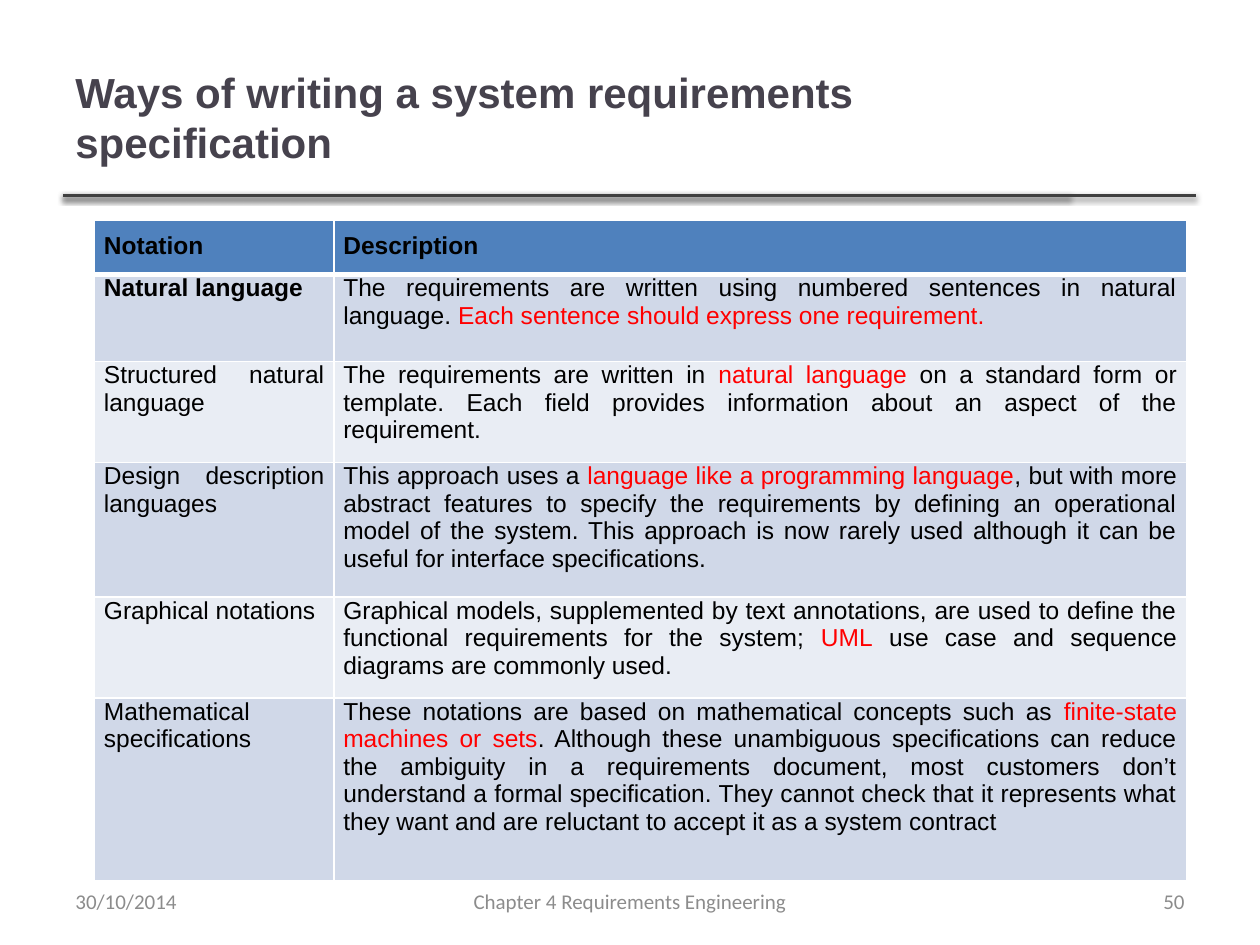
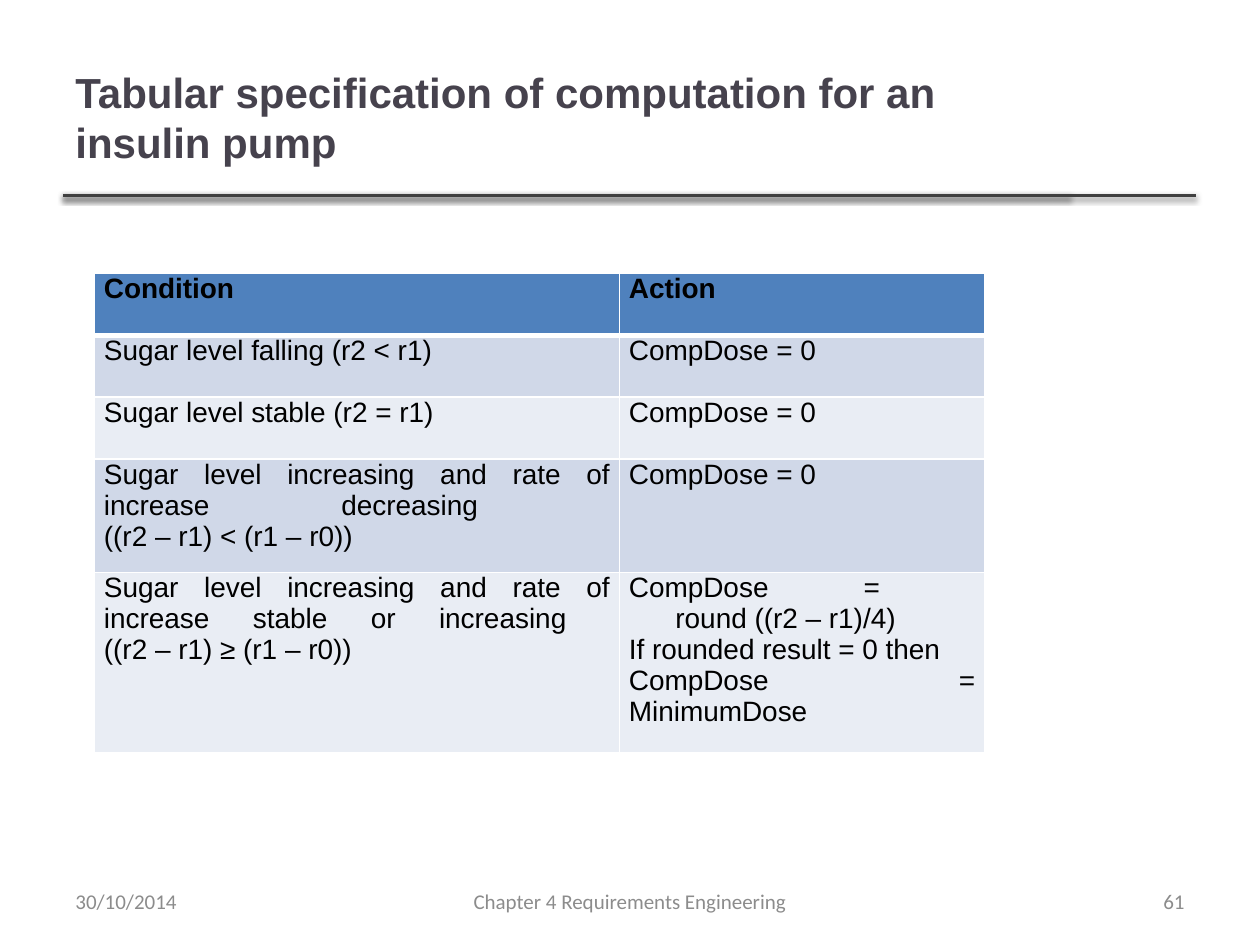
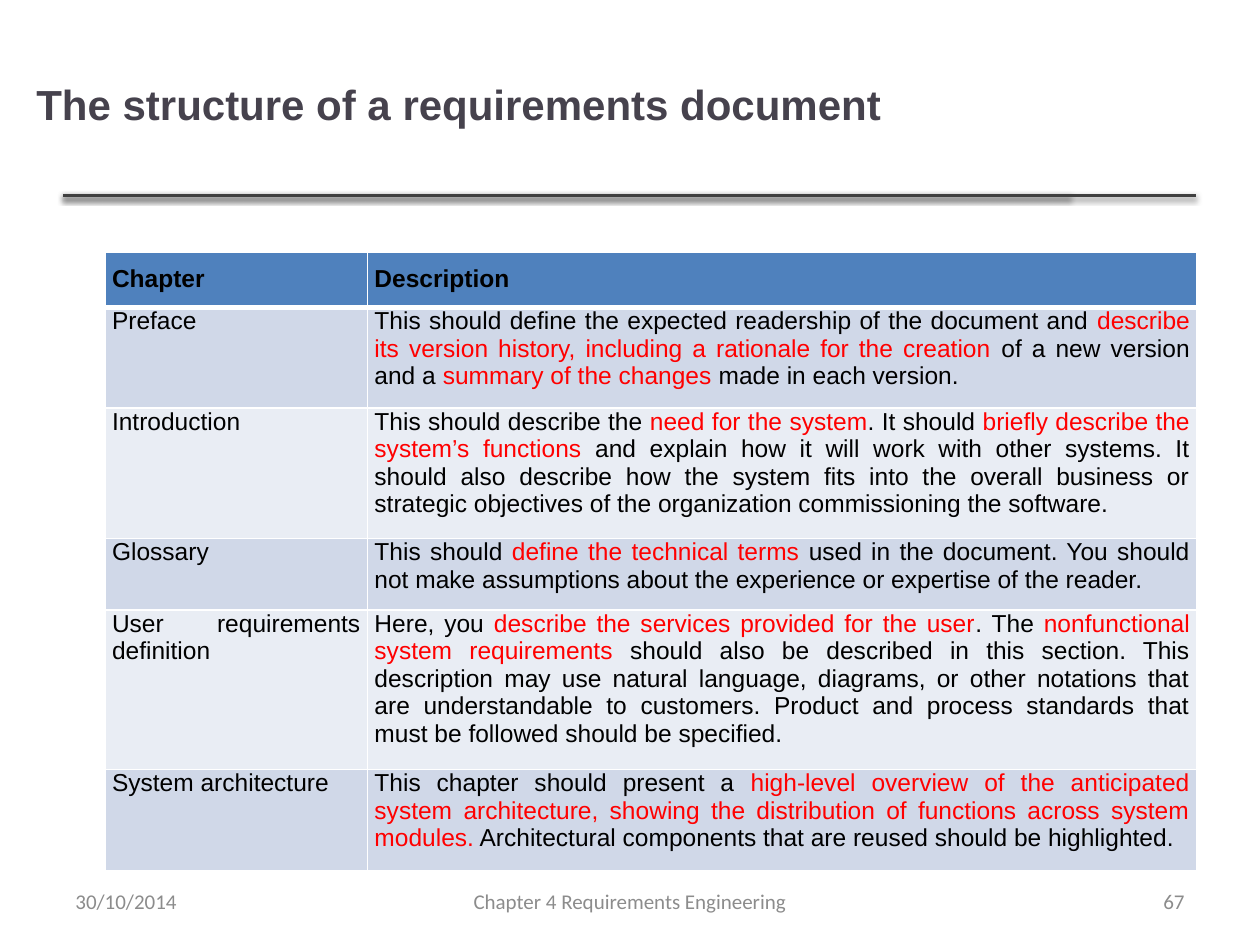
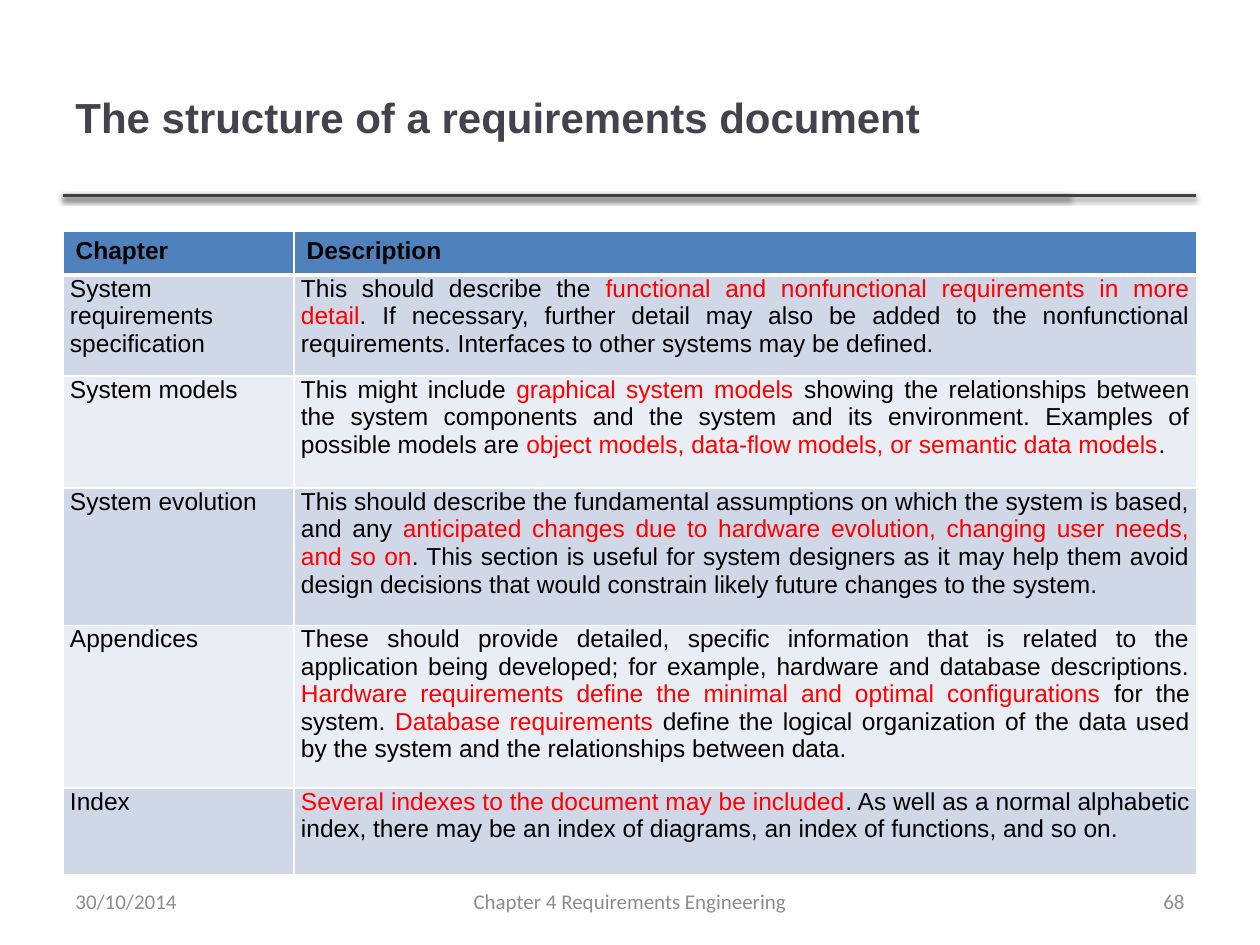
import copy

import lxml.etree
import pptx
import pptx.dml.color
import pptx.enum.shapes
import pptx.enum.text
import pptx.oxml
import pptx.oxml.ns
import pptx.util

Pt = pptx.util.Pt
RGB = pptx.dml.color.RGBColor
ALIGN = pptx.enum.text.PP_ALIGN
MIDDLE = pptx.enum.text.MSO_ANCHOR.MIDDLE
STRAIGHT = pptx.enum.shapes.MSO_CONNECTOR.STRAIGHT

# Colours
INK = RGB(0x00, 0x00, 0x00)
RED = RGB(0xFF, 0x00, 0x00)
TITLE = RGB(0x46, 0x42, 0x4D)
GREY = RGB(0x8C, 0x8C, 0x8C)
RULE = RGB(0x40, 0x40, 0x40)
HEAD = RGB(0x4F, 0x81, 0xBD)
BANDS = RGB(0xD0, 0xD8, 0xE8), RGB(0xE9, 0xED, 0xF4)
WHITE = RGB(0xFF, 0xFF, 0xFF)

NS = pptx.oxml.ns.nsdecls("a")
SHADOW = f"""<a:effectLst {NS}>
  <a:outerShdw blurRad="{Pt(3.1)}" dist="{Pt(1.6)}" dir="5400000" rotWithShape="0">
    <a:srgbClr val="000000"><a:alpha val="38000"/></a:srgbClr>
  </a:outerShdw>
</a:effectLst>"""


def write(par, text, size=14, font="Arial", color=INK, bold=False, align=ALIGN.LEFT):
    """Fill a paragraph; *stars* mark red words and newlines become breaks."""
    par.alignment = align
    for i, part in enumerate(text.split("*")):
        for j, line in enumerate(part.split("\n")):
            if j:
                par.add_line_break()
                par._p[-1].append(copy.deepcopy(run._r.rPr))
            if not line:
                continue
            run = par.add_run()
            run.text = line
            run.font.name, run.font.size = font, Pt(size)
            run.font.bold = bold
            run.font.color.rgb = RED if i % 2 else color


class Deck:
    def __init__(self):
        self.prs = pptx.Presentation()
        self.prs.slide_width, self.prs.slide_height = Pt(720), Pt(540)
        self.slide = None

    def page(self, title, number, spot=(36, 21.6, 574.6, 90)):
        """Start a slide with its title, double rule and footer."""
        self.slide = self.prs.slides.add_slide(self.prs.slide_layouts[6])
        for end in (611.3, 683.3):
            self.rule(36, end, 111.6)
        self.box(title, *spot, size=24, color=TITLE, bold=True)
        foot = (
            ("30/10/2014", 36, 168, ALIGN.LEFT),
            ("Chapter 4 Requirements Engineering", 246, 228, ALIGN.CENTER),
            (str(number), 516, 168, ALIGN.RIGHT),
        )
        for text, left, width, align in foot:
            self.box(text, left, 500.5, width, 28.75, size=12,
                     font="Calibri", color=GREY, align=align)

    def rule(self, start, end, top):
        line = self.slide.shapes.add_connector(
            STRAIGHT, Pt(start), Pt(top), Pt(end), Pt(top))
        line.line.color.rgb = RULE
        line.line.width = Pt(2)
        line._element.spPr.append(pptx.oxml.parse_xml(SHADOW))

    def box(self, text, left, top, width, height, **style):
        frame = self.slide.shapes.add_textbox(
            Pt(left), Pt(top), Pt(width), Pt(height)).text_frame
        frame.word_wrap = True
        frame.vertical_anchor = MIDDLE
        write(frame.paragraphs[0], text, **style)

    def edge(self, cell, row):
        """White cell borders, thick between the header and the body."""
        props = cell._tc.get_or_add_tcPr()
        thick = {0: "lnB", 1: "lnT"}.get(row)
        for side in ("lnL", "lnR", "lnT", "lnB"):
            width = Pt(3 if side == thick else 1)
            line = lxml.etree.SubElement(
                props, pptx.oxml.ns.qn("a:" + side), w=str(int(width)))
            line.append(pptx.oxml.parse_xml(
                f'<a:solidFill {NS}><a:srgbClr val="{WHITE}"/></a:solidFill>'))

    def table(self, left, top, cols, rows, data, size=14, side=5.4,
              head=(5.4, 7.2, 7.2)):
        """Draw a banded table; head is the header's side, top and bottom inset."""
        grid = self.slide.shapes.add_table(
            len(rows), len(cols), Pt(left), Pt(top), Pt(sum(cols)), Pt(sum(rows))).table
        for col, width in zip(grid.columns, cols):
            col.width = Pt(width)
        for i, (height, texts) in enumerate(zip(rows, data)):
            grid.rows[i].height = Pt(height)
            for j, text in enumerate(texts):
                cell = grid.cell(i, j)
                self.edge(cell, i)
                cell.fill.solid()
                cell.fill.fore_color.rgb = BANDS[(i - 1) % 2] if i else HEAD
                inset, above, below = (side, 0, 7.2) if i else head
                cell.margin_left = cell.margin_right = Pt(inset)
                cell.margin_top, cell.margin_bottom = Pt(above), Pt(below)
                frame = cell.text_frame
                for k, part in enumerate(text if isinstance(text, list) else [text]):
                    par = frame.add_paragraph() if k else frame.paragraphs[0]
                    write(par, part, size=size, bold=i == 0, align=ALIGN.JUSTIFY)
        return grid


WAYS = [
    ("Notation", "Description"),
    ("Natural language",
     "The requirements are written using numbered sentences in natural language. "
     "*Each sentence should express one requirement.*"),
    ("Structured natural language ",
     "The requirements are written in *natural language *on a standard form or "
     "template. Each field provides information about an aspect of the requirement."),
    ("Design description languages",
     "This approach uses a *language like a programming language*, but with more "
     "abstract features to specify the requirements by defining an operational model "
     "of the system. This approach is now rarely used although it can be useful for "
     "interface specifications."),
    ("Graphical notations",
     "Graphical models, supplemented by text annotations, are used to define the "
     "functional requirements for the system; *UML* use case and sequence diagrams "
     "are commonly used."),
    ("Mathematical specifications",
     "These notations are based on mathematical concepts such as *finite-state "
     "machines or sets*. Although these unambiguous specifications can reduce the "
     "ambiguity in a requirements document, most customers don’t understand a formal "
     "specification. They cannot check that it represents what they want and are "
     "reluctant to accept it as a system contract"),
]

DOSES = [
    ("Condition", "Action"),
    ("Sugar level falling (r2 < r1)", "CompDose = 0"),
    ("Sugar level stable (r2 = r1)", "CompDose = 0"),
    ("Sugar level increasing and rate of increase decreasing \n"
     "((r2 – r1) < (r1 – r0))", "CompDose = 0"),
    ("Sugar level increasing and rate of increase stable or increasing \n"
     "((r2 – r1) ≥ (r1 – r0))",
     ["CompDose = \nround ((r2 – r1)/4)",
      "If rounded result = 0 then ",
      "CompDose = MinimumDose"]),
]

FRONT = [
    ("Chapter", "Description"),
    ("Preface",
     "This should define the expected readership of the document and *describe its "
     "version history, including a rationale for the creation *of a new version and "
     "a *summary of the changes *made in each version. "),
    ("Introduction",
     "This should describe the *need for the system*. It should *briefly describe "
     "the system’s functions *and explain how it will work with other systems. It "
     "should also describe how the system fits into the overall business or strategic "
     "objectives of the organization commissioning the software."),
    ("Glossary",
     "This should *define the technical terms *used in the document. You should not "
     "make assumptions about the experience or expertise of the reader."),
    ("User requirements definition",
     "Here, you *describe the services provided for the user*. The *nonfunctional "
     "system requirements* should also be described in this section. This description "
     "may use natural language, diagrams, or other notations that are understandable "
     "to customers. Product and process standards that must be followed should be "
     "specified."),
    ("System architecture",
     "This chapter should present a *high-level overview of the anticipated system "
     "architecture, showing the distribution of functions across system modules.* "
     "Architectural components that are reused should be highlighted."),
]

BACK = [
    ("Chapter", "Description"),
    ("System requirements specification",
     "This should describe the *functional and nonfunctional requirements in more "
     "detail*. If necessary, further detail may also be added to the nonfunctional "
     "requirements. Interfaces to other systems may be defined."),
    ("System models",
     "This might include *graphical system models *showing the relationships between "
     "the system components and the system and its environment. Examples of possible "
     "models are *object models, data-flow models, or semantic data models*. "),
    ("System evolution",
     "This should describe the fundamental assumptions on which the system is based, "
     "and any *anticipated changes due to hardware evolution, changing user needs, "
     "and so on*. This section is useful for system designers as it may help them "
     "avoid design decisions that would constrain likely future changes to the "
     "system."),
    ("Appendices",
     "These should provide detailed, specific information that is related to the "
     "application being developed; for example, hardware and database descriptions. "
     "*Hardware requirements define the minimal and optimal configurations *for the "
     "system. *Database requirements *define the logical organization of the data "
     "used by the system and the relationships between data. "),
    ("Index",
     "*Several indexes to the document may be included*. As well as a normal "
     "alphabetic index, there may be an index of diagrams, an index of functions, "
     "and so on."),
]


def main():
    deck = Deck()

    # Ways of writing
    deck.page("Ways of writing a system requirements specification", 50)
    ways = deck.table(54, 125.6, (136.8, 487.2),
                      (28.8, 49.7, 54.6, 77, 54.6, 104.5), WAYS)
    ways.cell(1, 0).text_frame.paragraphs[0].runs[0].font.bold = True

    # Insulin pump
    deck.page("Tabular specification of computation for an insulin pump", 61)
    doses = deck.table(54, 156.4, (300, 208.8), (35.3, 35.3, 35.3, 60.5, 96), DOSES,
                       size=16, head=(5.4, 0, 7.2))
    hang = doses.cell(4, 1).text_frame.paragraphs[0]._p.get_or_add_pPr()
    hang.set("marL", str(Pt(26.6)))
    hang.set("indent", str(-Pt(26.6)))

    # Document structure, first half
    topic = "The structure of a requirements document"
    deck.page(topic, 67, spot=(13.7, 16.6, 580.3, 85.7))
    deck.table(60, 144.3, (150, 474), (29.5, 54.4, 70.2, 38.7, 85.9, 54.4), FRONT,
               side=4, head=(4, 7.2, 7.2))

    # Document structure, second half
    deck.page(topic, 68)
    deck.table(36, 132, (132, 516), (25.2, 54.7, 64.1, 78.5, 92.9, 49.7), BACK,
               side=4, head=(7.2, 3.6, 3.6))

    deck.prs.save("out.pptx")


if __name__ == "__main__":
    main()
